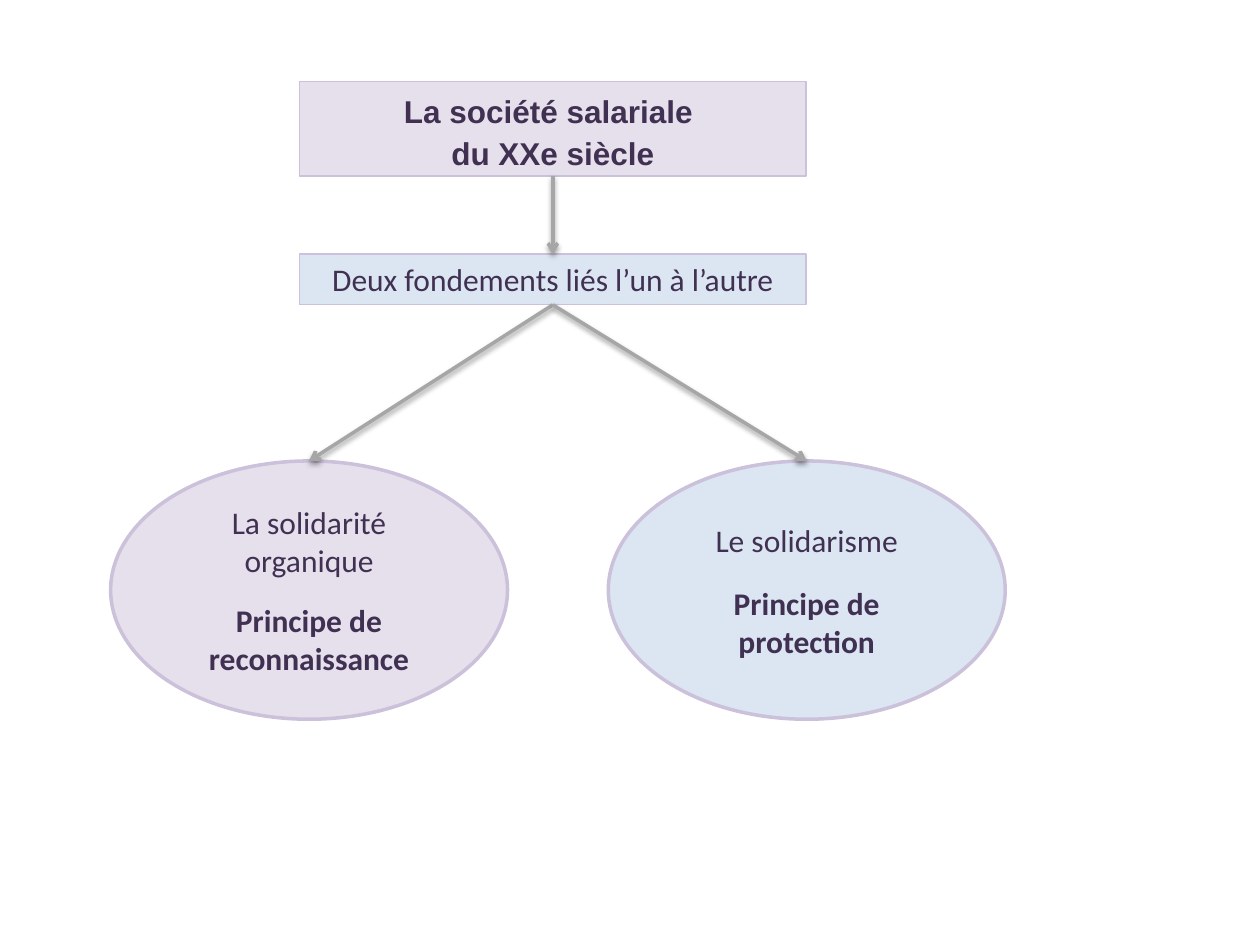
from dataclasses import dataclass

from lxml.etree import SubElement
from pptx import Presentation
from pptx.dml.color import RGBColor
from pptx.enum.shapes import MSO_CONNECTOR, MSO_SHAPE
from pptx.enum.text import MSO_ANCHOR, MSO_AUTO_SIZE, PP_ALIGN
from pptx.oxml.ns import qn
from pptx.util import Pt


@dataclass(frozen=True)
class Theme:
    lilac: str = "E6E0EC"
    sky: str = "DCE6F2"
    outline: str = "CCC1DA"
    ink: str = "403152"
    arrow: str = "A6A6A6"
    shadow: str = "000000"
    heading_font: str = "Arial"
    body_font: str = "Calibri"
    text_size: float = 18
    thin_line: float = 0.75
    thick_line: float = 2


THEME = Theme()
TOP, BOTTOM = 0, 2


def add_panel(page, preset, box, fill, line_width, frame_format):
    """Add a filled, outlined shape and format its text frame."""
    panel = page.shapes.add_shape(preset, *(Pt(length) for length in box))
    panel.shadow.inherit = False
    panel.fill.solid()
    panel.fill.fore_color.rgb = RGBColor.from_string(fill)
    panel.line.color.rgb = RGBColor.from_string(THEME.outline)
    panel.line.width = Pt(line_width)
    for name, value in frame_format.items():
        setattr(panel.text_frame, name, value)
    return panel


def write_lines(panel, lines, para_format=None):
    """Write (text, font format) lines; para_format applies to each of them."""
    frame = panel.text_frame
    for index, (text, font_format) in enumerate(lines):
        para = frame.paragraphs[0] if index == 0 else frame.add_paragraph()
        for name, value in {"alignment": PP_ALIGN.CENTER, **(para_format or {})}.items():
            setattr(para, name, value)
        span = para.add_run()
        span.text = text
        span.font.color.rgb = RGBColor.from_string(THEME.ink)
        defaults = {"name": THEME.body_font, "size": Pt(THEME.text_size), "bold": False}
        for name, value in {**defaults, **font_format}.items():
            setattr(span.font, name, value)


def add_banner(page, box, fill, lines, para_format=None):
    frame_format = {"word_wrap": True, "vertical_anchor": MSO_ANCHOR.TOP,
                    "auto_size": MSO_AUTO_SIZE.SHAPE_TO_FIT_TEXT}
    banner = add_panel(page, MSO_SHAPE.RECTANGLE, box, fill, THEME.thin_line, frame_format)
    write_lines(banner, lines, para_format)
    return banner


def add_foundation(page, box, fill, name, principle, gap):
    """Add an ellipse with a foundation and, below a gap, its principle."""
    frame_format = {"word_wrap": True, "vertical_anchor": MSO_ANCHOR.MIDDLE}
    ellipse = add_panel(page, MSO_SHAPE.OVAL, box, fill, THEME.thick_line, frame_format)
    write_lines(ellipse, [(name, {}), (principle, {"bold": True})])
    ellipse.text_frame.paragraphs[1].space_before = Pt(gap)
    return ellipse


def add_arrow(page, source, target):
    """Join the bottom of source to the top of target with a shadowed arrow."""
    arrow = page.shapes.add_connector(MSO_CONNECTOR.STRAIGHT, 0, 0, 0, 0)
    arrow.begin_connect(source, BOTTOM)
    arrow.end_connect(target, TOP)
    arrow.line.color.rgb = RGBColor.from_string(THEME.arrow)
    arrow.line.width = Pt(THEME.thick_line)
    properties = arrow._element.spPr
    SubElement(properties.find(qn("a:ln")), qn("a:tailEnd"), type="arrow")
    effects = SubElement(properties, qn("a:effectLst"))
    shadow = SubElement(effects, qn("a:outerShdw"), blurRad=str(Pt(3.1)),
                        dist=str(Pt(1.6)), dir="5400000", rotWithShape="0")
    color = SubElement(shadow, qn("a:srgbClr"), val=THEME.shadow)
    SubElement(color, qn("a:alpha"), val="38000")


def build_diagram(page, box):
    left, top, width, height = box
    banner_width, ellipse_width, ellipse_height = 289.4, 226.8, 147.6
    banner_left = left + 108

    # Title and shared basis
    heading = {"name": THEME.heading_font, "bold": True}
    title = add_banner(page, (banner_left, top, banner_width, 54), THEME.lilac,
                       [("La société salariale ", heading), ("du XXe siècle", heading)],
                       {"line_spacing": Pt(24)})
    basis = add_banner(page, (banner_left, top + 98.6, banner_width, 29), THEME.sky,
                       [("Deux fondements liés l’un à l’autre", {})])

    # Two foundations, at the left and right edges
    ellipse_top = top + height - ellipse_height
    foundations = [
        add_foundation(page, (x, ellipse_top, ellipse_width, ellipse_height), *content)
        for x, content in (
            (left, (THEME.lilac, "La solidarité organique", "Principe de reconnaissance", 12.8)),
            (left + width - ellipse_width,
             (THEME.sky, "Le solidarisme", "Principe de protection", 14.6)),
        )
    ]

    # Arrows
    for foundation in foundations:
        add_arrow(page, basis, foundation)
    add_arrow(page, title, basis)


def main():
    deck = Presentation()
    deck.slide_width, deck.slide_height = Pt(720), Pt(540)
    page = deck.slides.add_slide(deck.slide_layouts[6])
    build_diagram(page, (63.2, 46.6, 511.2, 364.4))
    deck.save("out.pptx")


if __name__ == "__main__":
    main()
